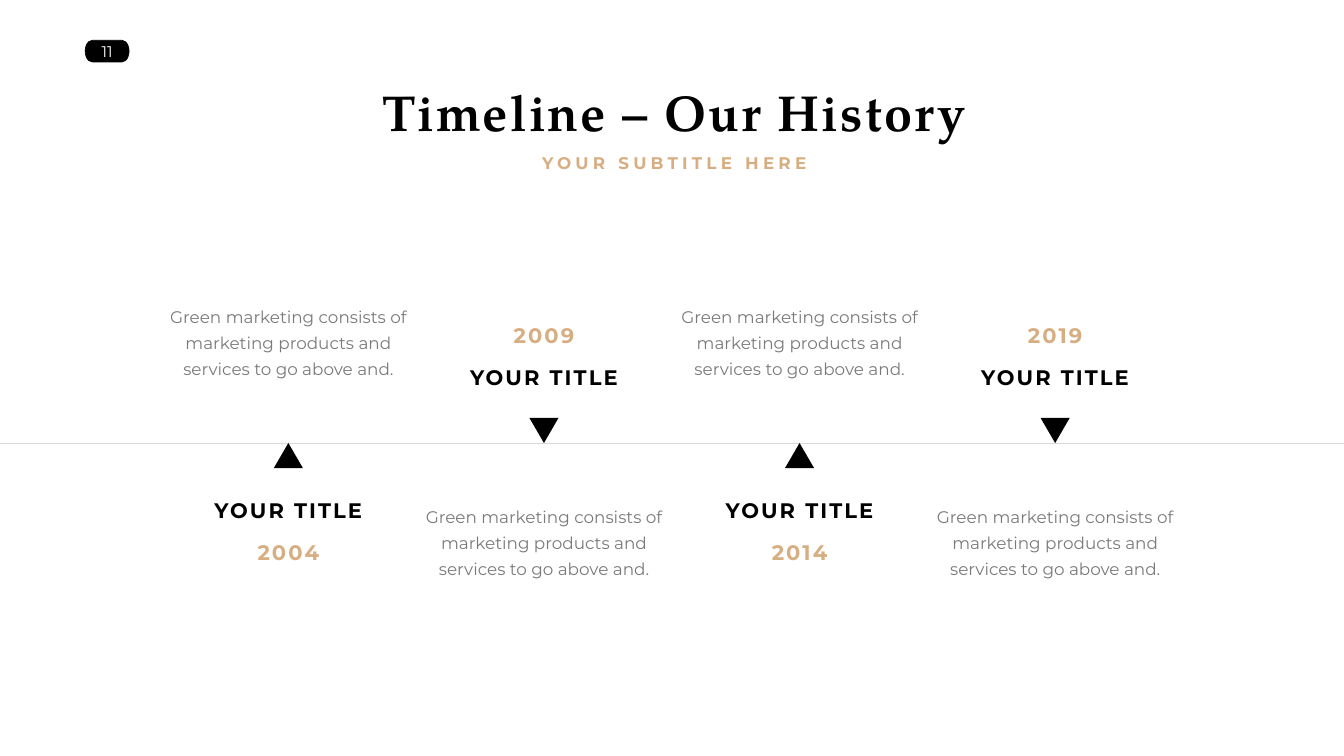
from lxml import etree
from pptx import Presentation
from pptx import util as u
from pptx.dml.color import RGBColor
from pptx.enum import shapes, text
from pptx.oxml import ns

PX = 9144  # EMU per px, 100 px to the inch
COLORS = {"black": "000000", "white": "FFFFFF", "gold": "D6AE81",
          "grey": "7A7A7A", "rule": "D9D9D9"}
SANS, SERIF = "Montserrat", "TeX Gyre Pagella"
FORMATS = {
    "badge": {"color": "white", "anchor": text.MSO_ANCHOR.MIDDLE,
              "font": {"name": SANS, "size": u.Pt(22)}},
    "title": {"color": "black", "tracking": 3,
              "font": {"name": SERIF, "size": u.Pt(72), "bold": True}},
    "subtitle": {"color": "gold", "tracking": 6, "leading": 37,
                 "font": {"name": SANS, "size": u.Pt(24), "bold": True}},
    "heading": {"color": "black", "tracking": 3, "anchor": text.MSO_ANCHOR.MIDDLE,
                "font": {"name": SANS, "size": u.Pt(30), "bold": True}},
    "year": {"color": "gold", "tracking": 3, "anchor": text.MSO_ANCHOR.MIDDLE,
             "font": {"name": SANS, "size": u.Pt(30), "bold": True}},
    "body": {"color": "grey", "leading": 37, "wrap": True,
             "font": {"name": SANS, "size": u.Pt(24)}},
}


class SlideBuilder:
    def __init__(self, slide):
        self.slide = slide

    def rgb(self, name):
        return RGBColor.from_string(COLORS[name])

    def set_text(self, shape, words, style):
        """Put one centred paragraph into a shape, in a named format."""
        style = FORMATS[style]
        frame = shape.text_frame
        frame.word_wrap = style.get("wrap", False)
        frame.vertical_anchor = style.get("anchor", text.MSO_ANCHOR.TOP)
        paragraph = frame.paragraphs[0]
        paragraph.alignment = text.PP_ALIGN.CENTER
        if "leading" in style:
            paragraph.line_spacing = u.Pt(style["leading"])
            before = etree.SubElement(paragraph._p.get_or_add_pPr(), ns.qn("a:spcBef"))
            etree.SubElement(before, ns.qn("a:spcPct"), val="20000")
        run = paragraph.add_run()
        run.text = words
        for name, value in style["font"].items():
            setattr(run.font, name, value)
        run.font.color.rgb = self.rgb(style["color"])
        if "tracking" in style:
            run._r.get_or_add_rPr().set("spc", str(style["tracking"] * 100))

    def text_box(self, center, top, width, height, words, style):
        box = self.slide.shapes.add_textbox(
            (center - width // 2) * PX, top * PX, width * PX, height * PX)
        self.set_text(box, words, style)
        box.text_frame.auto_size = text.MSO_AUTO_SIZE.SHAPE_TO_FIT_TEXT

    def solid(self, kind, left, top, width, height, rotation=0):
        shape = self.slide.shapes.add_shape(
            kind, left * PX, top * PX, width * PX, height * PX)
        shape.shadow.inherit = False
        shape.fill.solid()
        shape.fill.fore_color.rgb = self.rgb("black")
        shape.line.fill.background()
        shape.rotation = rotation
        return shape

    def badge(self, left, top, width, height, words):
        shape = self.solid(shapes.MSO_SHAPE.FLOWCHART_TERMINATOR, left, top, width, height)
        shape.line.color.rgb = self.rgb("black")
        shape.line.width = u.Pt(1)
        self.set_text(shape, words, "badge")

    def marker(self, center, top, rotation):
        self.solid(shapes.MSO_SHAPE.ISOSCELES_TRIANGLE, center - 29, top, 58, 50, rotation)

    def horizontal_rule(self, left, right, y):
        line = self.slide.shapes.add_connector(
            shapes.MSO_CONNECTOR.STRAIGHT, left * PX, y * PX, right * PX, y * PX)
        line.line.color.rgb = self.rgb("rule")
        line.line.width = u.Pt(1)
        etree.SubElement(line._element.spPr, ns.qn("a:effectLst"))


def main():
    width, axis = 2666, 879
    first_center, step = 572, 507
    body = "Green marketing consists of marketing products and services to go above and."

    presentation = Presentation()
    presentation.slide_width, presentation.slide_height = width * PX, 1500 * PX
    builder = SlideBuilder(presentation.slides.add_slide(presentation.slide_layouts[6]))

    builder.badge(169, 80, 87, 43, "11")
    builder.horizontal_rule(0, width, axis)
    builder.text_box(1337, 156, 1389, 131, "Timeline – Our History", "title")
    builder.text_box(1337, 287, 559, 57, "YOUR SUBTITLE HERE", "subtitle")

    # Milestones alternate: heading below the axis, then above it.
    below = {"marker": axis, "rotation": 0, "heading": 981, "year": 1065, "body": 592}
    above = {"marker": axis - 50, "rotation": 180, "heading": 717, "year": 635, "body": 989}
    for index, year in enumerate(("2004", "2009", "2014", "2019")):
        center = first_center + index * step
        place = above if index % 2 else below
        builder.marker(center, place["marker"], place["rotation"])
        builder.text_box(center, place["heading"], 322, 61, "YOUR TITLE", "heading")
        builder.text_box(center, place["year"], 148, 61, year, "year")
        builder.text_box(center, place["body"], 518, 163, body, "body")

    presentation.save("out.pptx")


if __name__ == "__main__":
    main()
